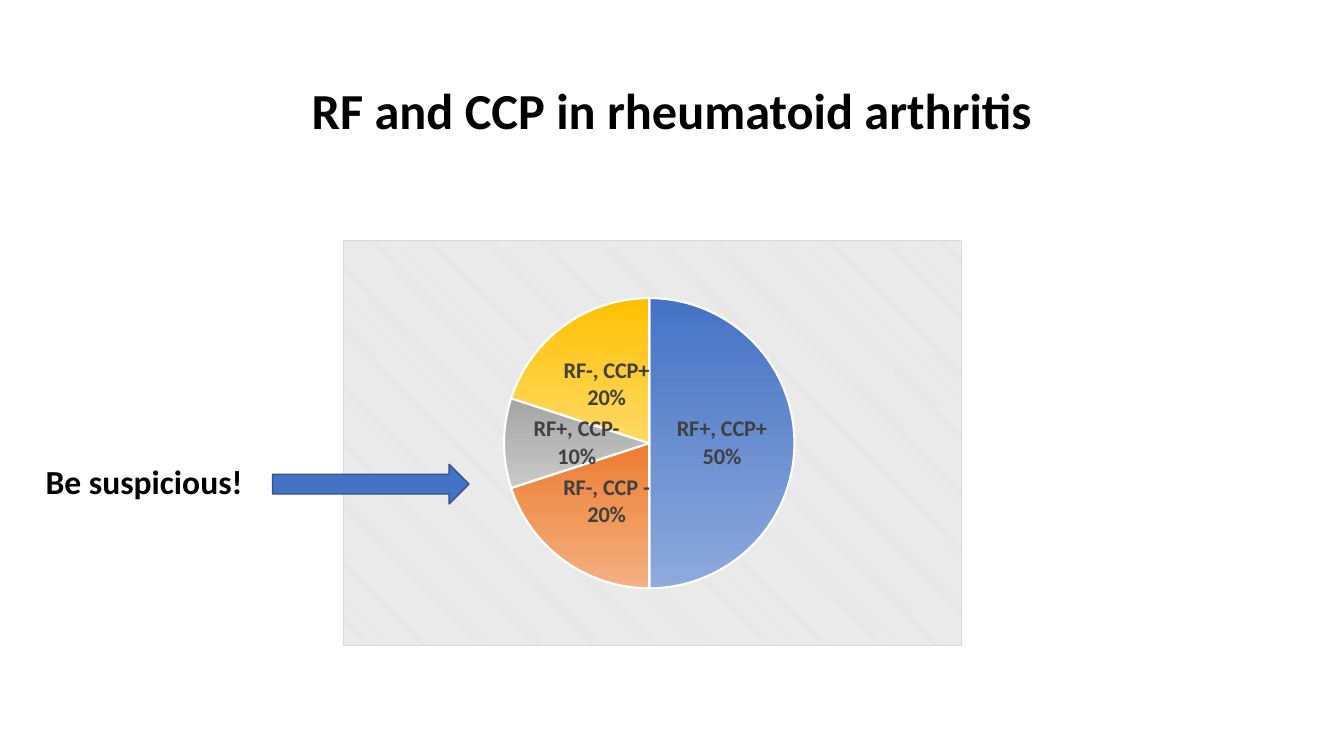
from lxml import etree
from pptx import Presentation
from pptx.chart.data import CategoryChartData
from pptx.dml.color import RGBColor
from pptx.enum import chart as charts, shapes, text
from pptx.oxml import parse_xml
from pptx.oxml.ns import qn
from pptx.util import Cm, Pt

NS = ('xmlns:c="http://schemas.openxmlformats.org/drawingml/2006/chart" '
      'xmlns:a="http://schemas.openxmlformats.org/drawingml/2006/main"')


def color(hex_code):
    return RGBColor.from_string(hex_code)


def add_label(s, words, size, left, top, width, height):
    tf = s.shapes.add_textbox(Cm(left), Cm(top), Cm(width), Cm(height)).text_frame
    tf.word_wrap = True
    tf.vertical_anchor = text.MSO_ANCHOR.MIDDLE
    p = tf.paragraphs[0]
    p.text = words
    p.alignment = text.PP_ALIGN.CENTER
    p.font.name, p.font.size, p.font.bold = "Calibri", Pt(size), True
    p.font.color.rgb = color("000000")
    return p


prs = Presentation()
prs.slide_width, prs.slide_height = Cm(33.87), Cm(19.05)
s = prs.slides.add_slide(prs.slide_layouts[6])

# Title
title = add_label(s, "RF and CCP in rheumatoid arthritis", 36, 2.33, 1.01, 29.21, 3.68)
title.line_spacing = 0.9

# Pie chart: name, share, gradient from top to bottom
slices = [
    ("RF+, CCP+", 50, "4472C4", "8FAADC"),
    ("RF-, CCP -", 20, "ED7D31", "F4B183"),
    ("RF+, CCP-", 10, "A5A5A5", "C9C9C9"),
    ("RF-, CCP+", 20, "FFC000", "FFD966"),
]
data = CategoryChartData()
data.categories = [name for name, *_ in slices]
data.add_series("Series 1", [share for _, share, *_ in slices])
chart = s.shapes.add_chart(charts.XL_CHART_TYPE.PIE, Cm(8.64), Cm(6.05),
                           Cm(15.6), Cm(10.24), data).chart
chart.has_title = chart.has_legend = False
chart.font.name, chart.font.size = "Calibri", Pt(10)
chart.font.color.rgb = color("000000")
plot = chart.plots[0]
plot.vary_by_categories = True

for i, (_, _, *shades) in enumerate(slices):
    fmt = plot.series[0].points[i].format
    fmt.fill.gradient()
    fmt.fill.gradient_angle = 270
    for stop, shade in zip(fmt.fill.gradient_stops, shades):
        stop.color.rgb = color(shade)
    fmt.line.color.rgb = color("FFFFFF")
    fmt.line.width = Pt(1.5)

# Slice labels
plot.has_data_labels = True
labels = plot.data_labels
labels.show_category_name = labels.show_percentage = True
labels.show_value = False
labels.number_format, labels.number_format_is_linked = "0%", False
labels.position = charts.XL_LABEL_POSITION.CENTER
labels.font.name, labels.font.size, labels.font.bold = "Calibri", Pt(16), True
labels.font.color.rgb = color("404040")
separator = etree.Element(qn("c:separator"))
separator.text = "\n"
labels._element.find(qn("c:showBubbleSize")).addnext(separator)

# Striped chart background with thin border
chart.element.find(qn("c:chart")).addnext(parse_xml(
    f'<c:spPr {NS}><a:pattFill prst="dkDnDiag">'
    '<a:fgClr><a:srgbClr val="FFFFFF"/></a:fgClr>'
    '<a:bgClr><a:srgbClr val="E6E6E6"/></a:bgClr></a:pattFill>'
    '<a:ln w="9525"><a:solidFill><a:srgbClr val="D9D9D9"/></a:solidFill></a:ln></c:spPr>'))

# Place of the pie within the chart
area = chart.element.find(".//" + qn("c:plotArea"))
for old in area.findall(qn("c:layout")):
    area.remove(old)
area.insert(0, parse_xml(
    f'<c:layout {NS}><c:manualLayout><c:layoutTarget val="inner"/>'
    '<c:xMode val="edge"/><c:yMode val="edge"/><c:x val="0.26"/><c:y val="0.14"/>'
    '<c:w val="0.47"/><c:h val="0.72"/></c:manualLayout></c:layout>'))

# Arrow and its caption
arrow = s.shapes.add_shape(shapes.MSO_SHAPE.RIGHT_ARROW, Cm(6.87), Cm(11.7), Cm(4.95), Cm(1))
arrow.shadow.inherit = False
arrow.fill.solid()
arrow.fill.fore_color.rgb = color("4472C4")
arrow.line.color.rgb = color("325491")
arrow.line.width = Pt(1)
add_label(s, "Be suspicious!", 24, 0.41, 11.49, 6.45, 1.28)

prs.save("out.pptx")
